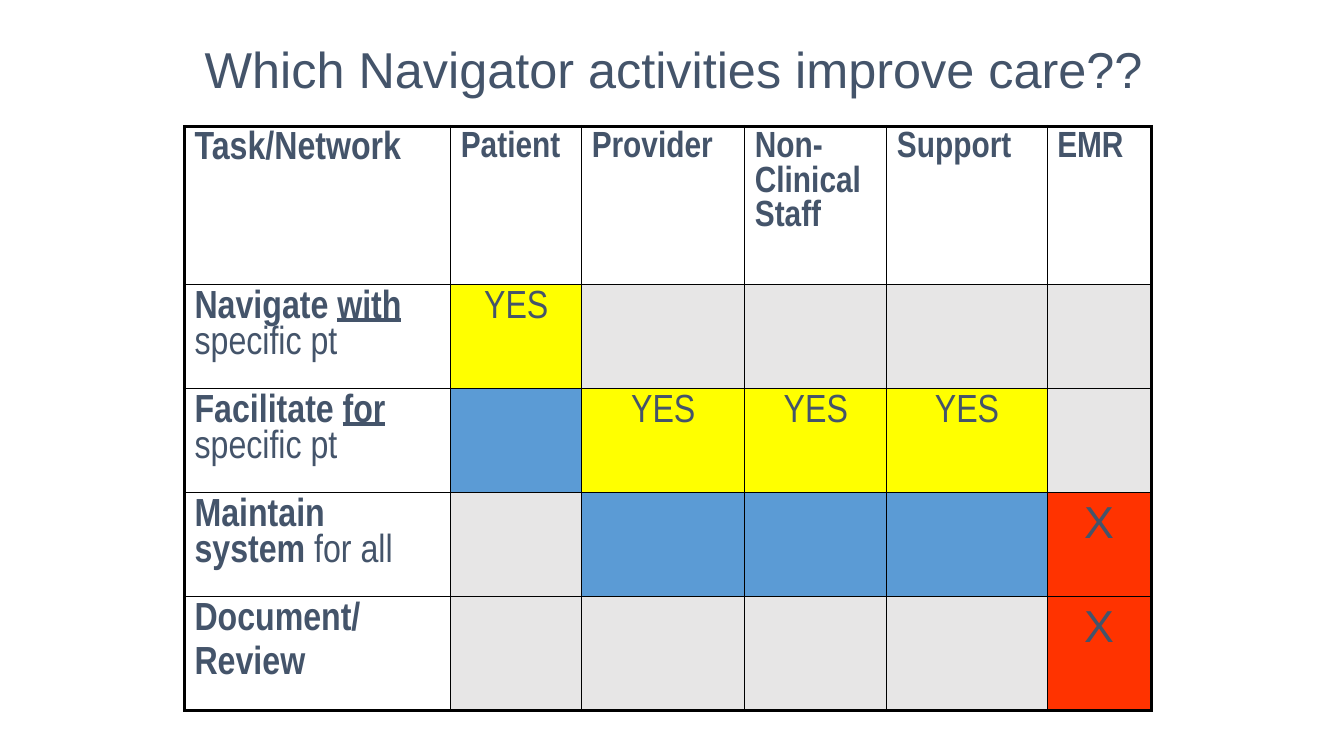
from lxml.etree import SubElement as Sub
from pptx import Presentation
from pptx.dml.color import RGBColor
from pptx.enum.text import MSO_AUTO_SIZE as Fit, PP_ALIGN as Align
from pptx.oxml.ns import qn
from pptx.util import Cm, Pt

SLATE = RGBColor(0x44, 0x54, 0x6A)
WHITE = RGBColor(0xFF, 0xFF, 0xFF)
GREY = RGBColor(0xE7, 0xE6, 0xE6)
BLUE = RGBColor(0x5B, 0x9B, 0xD5)
YELLOW = RGBColor(0xFF, 0xFF, 0x00)
RED = RGBColor(0xFF, 0x33, 0x00)
BLACK = RGBColor(0x00, 0x00, 0x00)

COLS = [6.71, 3.3, 4.11, 3.58, 4.04, 2.62]
ROWS = [3.99, 2.62, 2.62, 2.62, 2.87]
HEADS = ["Patient", "Provider", "Non-Clinical Staff", "Support", "EMR"]
TASKS = [
    [[("Navigate ", "b"), ("with", "bu"), (" ", "b"), ("specific pt", "")]],
    [[("Facilitate ", "b"), ("for", "bu"), (" ", "b"), ("specific pt", "")]],
    [[("Maintain system ", "b"), ("for all", "")]],
    [[("Document/", "b")], [("Review", "b")]],
]
MARKS = ["Y....", "BYYY.", ".BBBX", "....X"]
FILLS = {"Y": YELLOW, "B": BLUE, ".": GREY, "X": RED}


class Deck:
    plain = "Arial"
    narrow = "Arial Narrow"
    thin = 1
    thick = 2.25

    def __init__(self):
        self.prs = Presentation()
        self.prs.slide_width, self.prs.slide_height = Cm(33.87), Cm(19.05)
        self.slide = self.prs.slides.add_slide(self.prs.slide_layouts[6])

    def label(self, frame, paras, size, face, align=Align.LEFT):
        for n, parts in enumerate(paras):
            para = frame.add_paragraph() if n else frame.paragraphs[0]
            para.alignment = align
            if n:
                para.space_before = Pt(size * 0.2)
            for text, style in parts:
                run = para.add_run()
                run.text = text
                font = run.font
                font.name, font.size = face, Pt(size)
                font.color.rgb = SLATE
                font.bold = "b" in style
                font.underline = "u" in style

    def title(self, text, left, top, width, height):
        frame = self.slide.shapes.add_textbox(
            Cm(left), Cm(top), Cm(width), Cm(height)).text_frame
        frame.word_wrap = True
        frame.auto_size = Fit.SHAPE_TO_FIT_TEXT
        self.label(frame, [[(text, "")]], 36, self.plain, Align.CENTER)

    def table(self, left, top, cols, rows):
        grid = self.slide.shapes.add_table(
            len(rows), len(cols), Cm(left), Cm(top),
            Cm(sum(cols)), Cm(sum(rows))).table
        grid.first_row = grid.horz_banding = False
        for col, width in zip(grid.columns, cols):
            col.width = Cm(width)
        for row, height in zip(grid.rows, rows):
            row.height = Cm(height)
        for r in range(len(rows)):
            for c in range(len(cols)):
                outer = {"L": c == 0, "R": c == len(cols) - 1,
                         "T": r == 0, "B": r == len(rows) - 1}
                self.border(grid.cell(r, c), outer)
        return grid

    def border(self, cell, outer):
        props = cell._tc.get_or_add_tcPr()
        for side, edge in outer.items():
            line = Sub(props, qn("a:ln" + side))
            line.set("w", str(Pt(self.thick if edge else self.thin)))
            fill = Sub(line, qn("a:solidFill"))
            Sub(fill, qn("a:srgbClr")).set("val", str(BLACK))

    def cell(self, cell, fill, paras=(), size=28, face=narrow, align=Align.LEFT):
        cell.fill.solid()
        cell.fill.fore_color.rgb = fill
        self.label(cell.text_frame, paras, size, face, align)


def main():
    deck = Deck()
    grid = deck.table(4.65, 3.18, COLS, ROWS)
    deck.cell(grid.cell(0, 0), WHITE, [[("Task/Network", "b")]])
    for c, head in enumerate(HEADS, 1):
        deck.cell(grid.cell(0, c), WHITE, [[(head, "b")]], 26)
    for r, (task, marks) in enumerate(zip(TASKS, MARKS), 1):
        deck.cell(grid.cell(r, 0), WHITE, task)
        for c, mark in enumerate(marks, 1):
            cell, fill = grid.cell(r, c), FILLS[mark]
            if mark == "Y":
                deck.cell(cell, fill, [[("YES", "")]], align=Align.CENTER)
            elif mark == "X":
                deck.cell(cell, fill, [[("X", "")]], 32, deck.plain, Align.CENTER)
            else:
                deck.cell(cell, fill)
    deck.title("Which Navigator activities improve care??", 4.7, 0.84, 24.56, 1.8)
    deck.prs.save("out.pptx")


if __name__ == "__main__":
    main()
